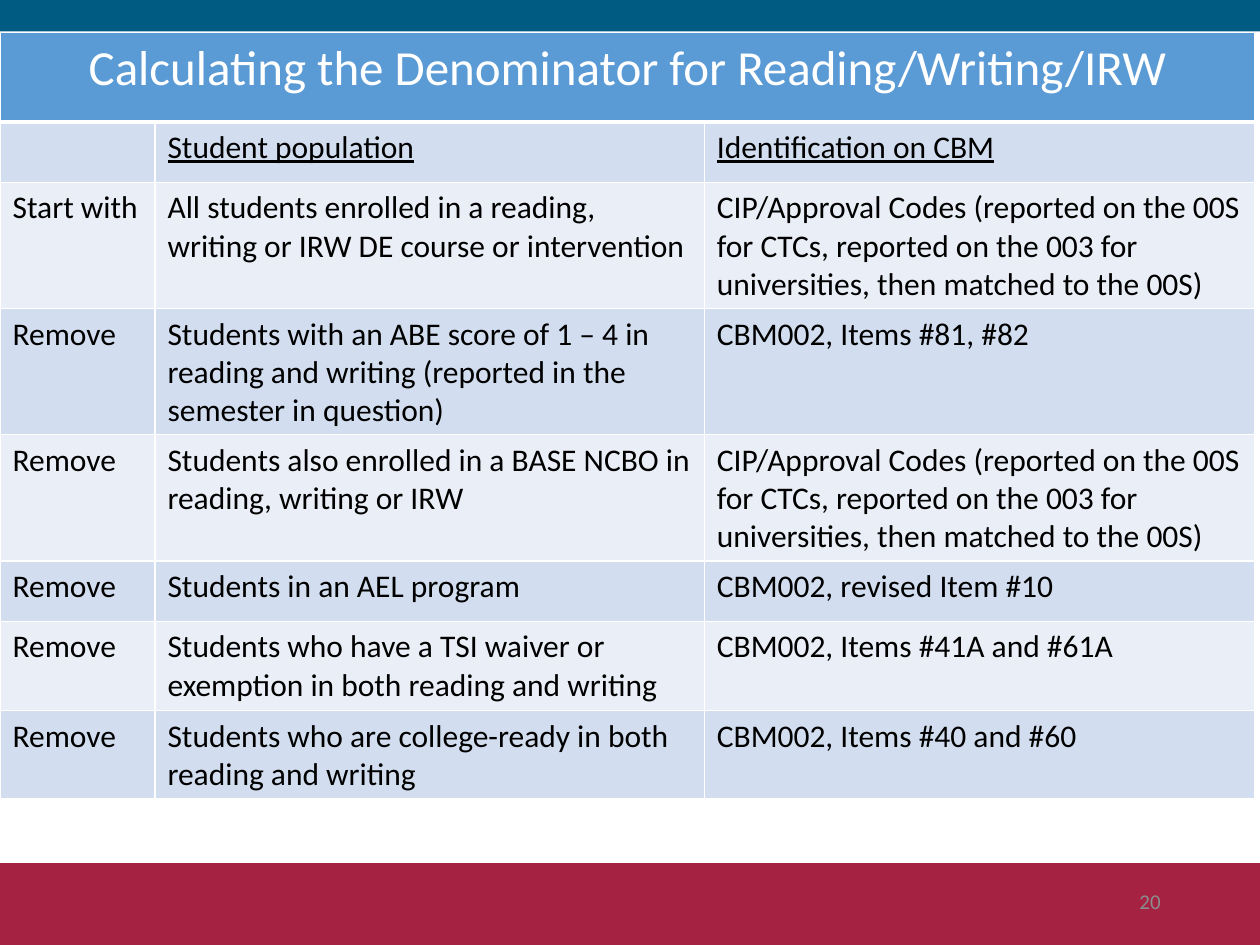
from lxml.etree import SubElement
from pptx import Presentation
from pptx.dml.color import RGBColor as RGB
from pptx.enum.shapes import MSO_SHAPE as SHAPE
from pptx.enum.text import MSO_ANCHOR as ANCHOR, PP_ALIGN as ALIGN
from pptx.oxml.ns import qn
from pptx.util import Inches, Pt

THEME = {
    "font": "Calibri",
    "title_size": 28, "body_size": 18, "number_size": 12,
    "white": "FFFFFF", "black": "000000", "gray": "8C8C8C",
    "crimson": "A62242", "navy": "005B83", "title_fill": "5B9BD5",
    "bands": ("EAEFF7", "D2DEEF"),
}
COLUMNS = (1.23, 4.36, 4.37)
ROWS = (0.71, 0.48, 0.99, 0.71, 0.99, 0.48, 0.71, 0.46)

TITLE = "Calculating the Denominator for Reading/Writing/IRW"
COURSE_CODES = ("CIP/Approval Codes (reported on the 00S for CTCs, reported on "
                "the 003 for universities, then matched to the 00S)")
STEPS = [
    ("", "Student population", "Identification on CBM"),
    ("Start with",
     "All students enrolled in a reading, writing or IRW DE course or intervention",
     COURSE_CODES),
    ("Remove",
     "Students with an ABE score of 1 – 4 in reading and writing "
     "(reported in the semester in question)",
     "CBM002, Items #81, #82"),
    ("Remove", "Students also enrolled in a BASE NCBO in reading, writing or IRW",
     COURSE_CODES),
    ("Remove", "Students in an AEL program", "CBM002, revised Item #10"),
    ("Remove", "Students who have a TSI waiver or exemption in both reading and writing",
     "CBM002, Items #41A and #61A"),
    ("Remove", "Students who are college-ready in both reading and writing",
     "CBM002, Items #40 and #60"),
]


def add_text(frame, text, size, color, align=ALIGN.LEFT, underline=False):
    paragraph = frame.paragraphs[0]
    paragraph.alignment = align
    run = paragraph.add_run()
    run.text = text
    font = run.font
    font.name, font.size, font.bold = THEME["font"], Pt(size), False
    font.color.rgb = RGB.from_string(color)
    if underline:
        font.underline = True


def paint_cell(cell, fill, bottom_width=1):
    # Borders must come before the fill inside the cell properties
    properties = cell._tc.get_or_add_tcPr()
    for side, width in (("L", 1), ("R", 1), ("T", 1), ("B", bottom_width)):
        line = SubElement(properties, qn(f"a:ln{side}"), w=str(Pt(width)))
        solid = SubElement(line, qn("a:solidFill"))
        SubElement(solid, qn("a:srgbClr"), val=THEME["white"])
    cell.fill.solid()
    cell.fill.fore_color.rgb = RGB.from_string(fill)


presentation = Presentation()
presentation.slide_width, presentation.slide_height = Inches(10), Inches(7.5)
slide = presentation.slides.add_slide(presentation.slide_layouts[6])

# Bottom and top bands
for top, height, color in ((6.85, 0.67, "crimson"), (0, 0.25, "navy")):
    band = slide.shapes.add_shape(SHAPE.RECTANGLE, 0, Inches(top),
                                  presentation.slide_width, Inches(height))
    band.shadow.inherit = False
    band.fill.solid()
    band.fill.fore_color.rgb = RGB.from_string(THEME[color])
    band.line.fill.background()

# Slide number
number = slide.shapes.add_textbox(Inches(7.06), Inches(6.95),
                                  Inches(2.25), Inches(0.4)).text_frame
number.word_wrap = True
number.vertical_anchor = ANCHOR.MIDDLE
add_text(number, "20", THEME["number_size"], THEME["gray"], ALIGN.RIGHT)

# Table grid
table = slide.shapes.add_table(len(ROWS), len(COLUMNS), 0, Inches(0.26),
                               Inches(sum(COLUMNS)), Inches(sum(ROWS))).table
for column, width in zip(table.columns, COLUMNS):
    column.width = Inches(width)
for row, height in zip(table.rows, ROWS):
    row.height = Inches(height)

# Title row across all columns
for cell in table.rows[0].cells:
    paint_cell(cell, THEME["title_fill"], bottom_width=3)
heading = table.cell(0, 0)
heading.merge(table.cell(0, len(COLUMNS) - 1))
add_text(heading.text_frame, TITLE, THEME["title_size"], THEME["white"], ALIGN.CENTER)

# Column headings and steps, in alternating bands
for row_index, step in enumerate(STEPS, start=1):
    for column_index, wording in enumerate(step):
        cell = table.cell(row_index, column_index)
        paint_cell(cell, THEME["bands"][row_index % 2])
        if wording:
            add_text(cell.text_frame, wording, THEME["body_size"], THEME["black"],
                     underline=row_index == 1)

presentation.save("out.pptx")
